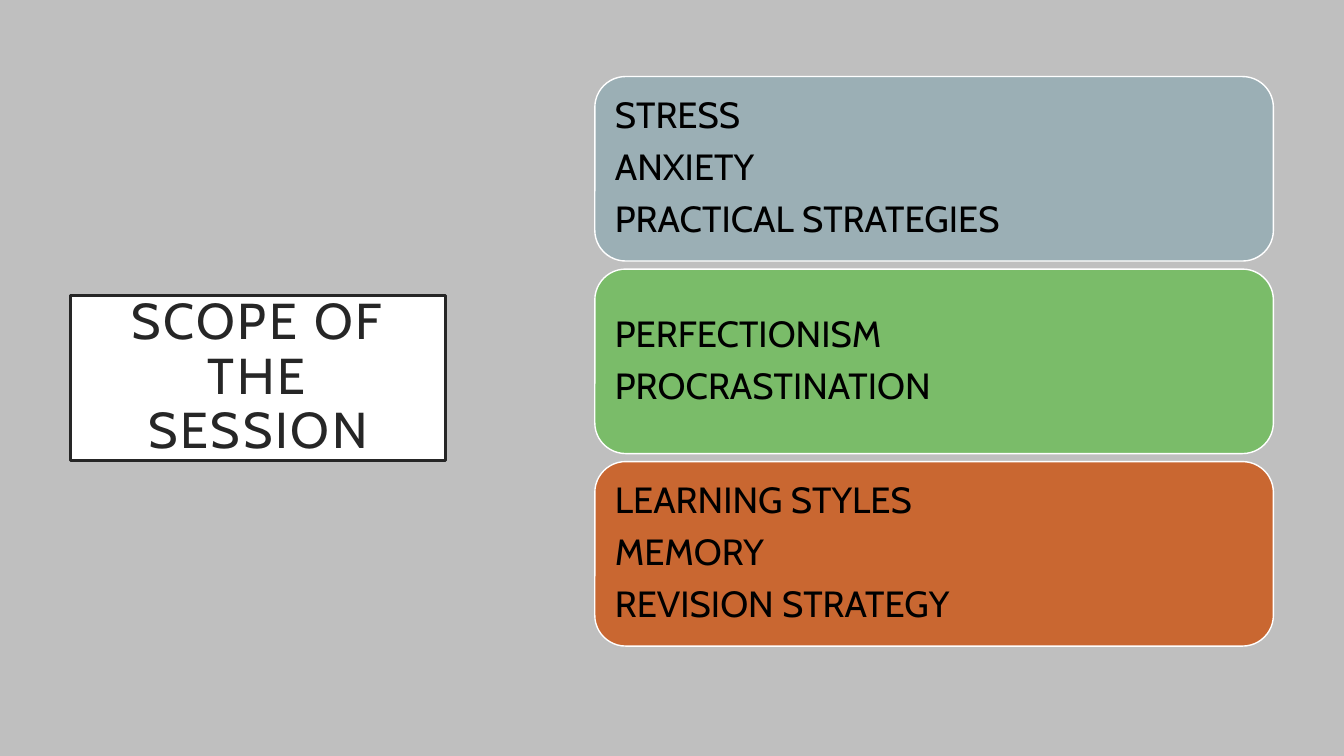
from pptx import Presentation
from pptx.dml.color import RGBColor
from pptx.enum import shapes, text
from pptx.util import Inches, Pt

GREY = RGBColor(0xBF, 0xBF, 0xBF)
WHITE = RGBColor(0xFF, 0xFF, 0xFF)
BLACK = RGBColor(0, 0, 0)
CHARCOAL = RGBColor(0x26, 0x26, 0x26)
BLUE_GREY = RGBColor(0x9B, 0xAF, 0xB5)
GREEN = RGBColor(0x7A, 0xBC, 0x69)
ORANGE = RGBColor(0xC9, 0x67, 0x31)

FONT = "Cabin"
TOPICS = [
    (BLUE_GREY, ["STRESS", "ANXIETY", "PRACTICAL STRATEGIES"]),
    (GREEN, ["PERFECTIONISM", "PROCRASTINATION"]),
    (ORANGE, ["LEARNING STYLES", "MEMORY", "REVISION STRATEGY"]),
]
CARD_TOP, CARD_HEIGHT, CARD_PITCH = 0.76, 1.83, 1.91


def add_box(s, kind, left, top, width, height, fill, line, line_width):
    sp = s.shapes.add_shape(kind, Inches(left), Inches(top),
                            Inches(width), Inches(height))
    sp.shadow.inherit = False
    sp.fill.solid()
    sp.fill.fore_color.rgb = fill
    sp.line.color.rgb = line
    sp.line.width = Pt(line_width)
    return sp


def add_text(sp, lines, size, color, align, inset, after=0, tracking=0):
    tf = sp.text_frame
    tf.word_wrap = True
    tf.vertical_anchor = text.MSO_ANCHOR.MIDDLE
    tf.margin_left = tf.margin_right = Inches(inset)
    tf.margin_top = tf.margin_bottom = Inches(inset)
    for i, line in enumerate(lines):
        p = tf.add_paragraph() if i else tf.paragraphs[0]
        p.alignment = align
        p.line_spacing = 0.9
        p.space_after = Pt(after)
        r = p.add_run()
        r.text = line
        r.font.name = FONT
        r.font.size = Pt(size)
        r.font.color.rgb = color
        if tracking:
            # Letter spacing is in hundredths of a point
            r.font._element.set("spc", str(tracking * 100))


def add_title(s):
    sp = add_box(s, shapes.MSO_SHAPE.RECTANGLE, 0.7, 2.93, 3.72, 1.64,
                 WHITE, CHARCOAL, 2.5)
    add_text(sp, ["SCOPE OF THE SESSION"], size=36, color=CHARCOAL,
             align=text.PP_ALIGN.CENTER, inset=0.2, tracking=2)


def add_topic_card(s, top, fill, lines):
    sp = add_box(s, shapes.MSO_SHAPE.ROUNDED_RECTANGLE, 5.9, top, 6.73,
                 CARD_HEIGHT, fill, WHITE, 1)
    add_text(sp, lines, size=26, color=BLACK, align=text.PP_ALIGN.LEFT,
             inset=0.11, after=9)


def main():
    prs = Presentation()
    prs.slide_width, prs.slide_height = Inches(13.33), Inches(7.5)
    s = prs.slides.add_slide(prs.slide_layouts[6])

    # Background
    s.background.fill.solid()
    s.background.fill.fore_color.rgb = GREY

    # Title on the left, stacked topic cards on the right
    add_title(s)
    for i, (fill, lines) in enumerate(TOPICS):
        add_topic_card(s, CARD_TOP + i * CARD_PITCH, fill, lines)

    prs.save("out.pptx")


if __name__ == "__main__":
    main()
